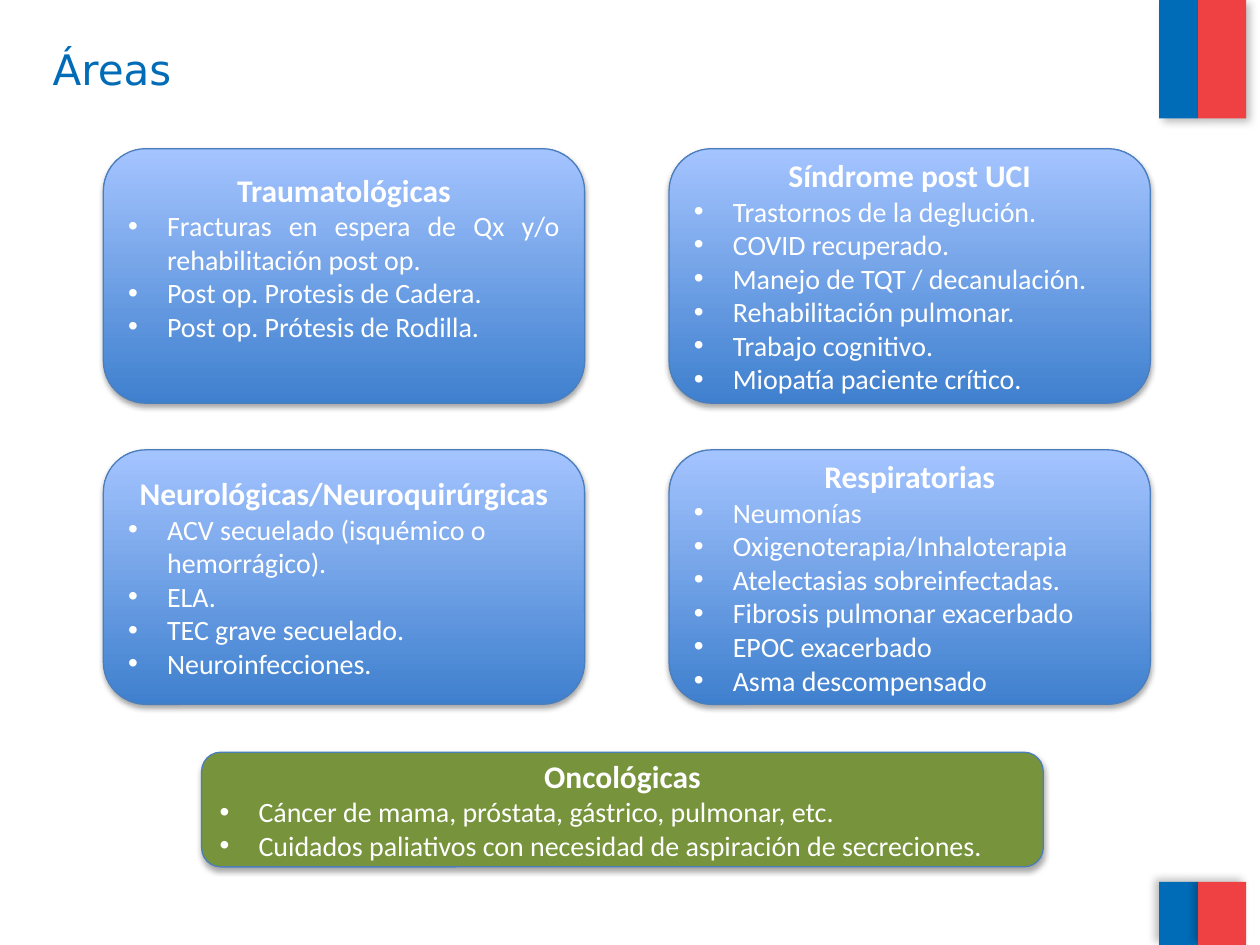
from lxml import etree
from pptx import Presentation
from pptx import util as u
from pptx.dml.color import RGBColor
from pptx.enum import shapes, text
from pptx.oxml.ns import qn

COLORS = {"blue": "006CB7", "red": "EF4144", "deep": "3F80CE", "sky": "A4C4FF",
          "edge": "4B7EBC", "green": "77933C", "white": "FFFFFF", "black": "000000"}
TITLE = "Áreas"
LEFT, JUSTIFY = text.PP_ALIGN.LEFT, text.PP_ALIGN.JUSTIFY
AREAS = [
    ("Traumatológicas", JUSTIFY, [
        "Fracturas en espera de Qx y/o rehabilitación post op.",
        "Post op. Protesis de Cadera.",
        "Post op. Prótesis de Rodilla."]),
    ("Síndrome post UCI", JUSTIFY, [
        "Trastornos de la deglución.", "COVID recuperado.",
        "Manejo de TQT / decanulación.", "Rehabilitación pulmonar.",
        "Trabajo cognitivo.", "Miopatía paciente crítico."]),
    ("Neurológicas/Neuroquirúrgicas", LEFT, [
        "ACV secuelado (isquémico o hemorrágico).", "ELA.",
        "TEC grave secuelado.", "Neuroinfecciones."]),
    ("Respiratorias", LEFT, [
        "Neumonías", "Oxigenoterapia/Inhaloterapia",
        "Atelectasias sobreinfectadas.", "Fibrosis pulmonar exacerbado",
        "EPOC exacerbado", "Asma descompensado"]),
]
ONCOLOGY = ("Oncológicas", JUSTIFY, [
    "Cáncer de mama, próstata, gástrico, pulmonar, etc.",
    "Cuidados paliativos con necesidad de aspiración de secreciones."])

GRID = {"left": 0.82, "top": 1.18, "column": 4.49, "row": 2.39, "width": 3.82, "height": 2.02}
STRIPES = [("blue", 9.2, 0.31), ("red", 9.51, 0.38)]
BANDS = [(0, 0.94, 45), (7, 0.5, 215)]
INDENT = 0.31


def color(name):
    return RGBColor.from_string(COLORS[name])


def add_shadow(shape, alpha, blur, distance, angle):
    shape.shadow.inherit = False
    effects = shape._element.spPr.find(qn("a:effectLst"))
    shadow = etree.SubElement(effects, qn("a:outerShdw"), blurRad=str(u.Pt(blur)),
                              dist=str(u.Pt(distance)), dir=str(angle * 60000),
                              algn="ctr", rotWithShape="0")
    tint = etree.SubElement(shadow, qn("a:srgbClr"), val=COLORS["black"])
    etree.SubElement(tint, qn("a:alpha"), val=str(alpha * 1000))


def add_block(page, kind, place, fill=None):
    box = page.shapes.add_shape(kind, *map(u.Inches, place))
    if fill:
        box.fill.solid()
        box.fill.fore_color.rgb = color(fill)
    else:
        box.fill.gradient()
        box.fill.gradient_angle = 90
        for stop, name in zip(box.fill.gradient_stops, ("deep", "sky")):
            stop.color.rgb = color(name)
    return box


def style(para, size, bold, name, font="Calibri"):
    for span in para.runs:
        span.font.name = font
        span.font.size = u.Pt(size)
        span.font.bold = bold
        span.font.color.rgb = color(name)


def add_area(page, place, area, fill=None):
    heading, align, items = area
    box = add_block(page, shapes.MSO_SHAPE.ROUNDED_RECTANGLE, place, fill)
    box.line.color.rgb = color("edge")
    box.line.width = u.Pt(0.75)
    add_shadow(box, 35, 3.1, 1.8, 90)
    frame = box.text_frame
    frame.word_wrap = True
    frame.vertical_anchor = text.MSO_ANCHOR.MIDDLE
    frame.text = "\n".join([heading] + items)
    first, *rest = frame.paragraphs
    first.alignment = text.PP_ALIGN.CENTER
    style(first, 18, True, "white")
    for para in rest:
        para.alignment = align
        style(para, 16, False, "white")
        props = para._p.get_or_add_pPr()
        props.set("marL", str(u.Inches(INDENT)))
        props.set("indent", str(-u.Inches(INDENT)))
        etree.SubElement(props, qn("a:buFont"), typeface="Arial")
        etree.SubElement(props, qn("a:buChar"), char="•")
    return box


def main():
    deck = Presentation()
    deck.slide_width, deck.slide_height = u.Inches(10), u.Inches(7.5)
    page = deck.slides.add_slide(deck.slide_layouts[6])

    for top, height, angle in BANDS:
        for name, left, width in STRIPES:
            stripe = add_block(page, shapes.MSO_SHAPE.RECTANGLE, (left, top, width, height), name)
            stripe.line.fill.background()
            add_shadow(stripe, 25, 5, 3, angle)

    title = page.shapes.add_textbox(*map(u.Inches, (0.32, 0.28, 8.93, 0.53)))
    title.text_frame.word_wrap = True
    title.text_frame.vertical_anchor = text.MSO_ANCHOR.MIDDLE
    title.text_frame.text = TITLE
    style(title.text_frame.paragraphs[0], 24, False, "blue", "DejaVu Sans")

    boxes = []
    for index, area in enumerate(AREAS):
        row, column = divmod(index, 2)
        place = (GRID["left"] + column * GRID["column"], GRID["top"] + row * GRID["row"],
                 GRID["width"], GRID["height"])
        boxes.append(add_area(page, place, area))
    boxes[0].text_frame.margin_bottom = u.Inches(0.35)
    add_area(page, (1.6, 5.97, 6.68, 0.91), ONCOLOGY, "green")

    deck.save("out.pptx")


if __name__ == "__main__":
    main()
